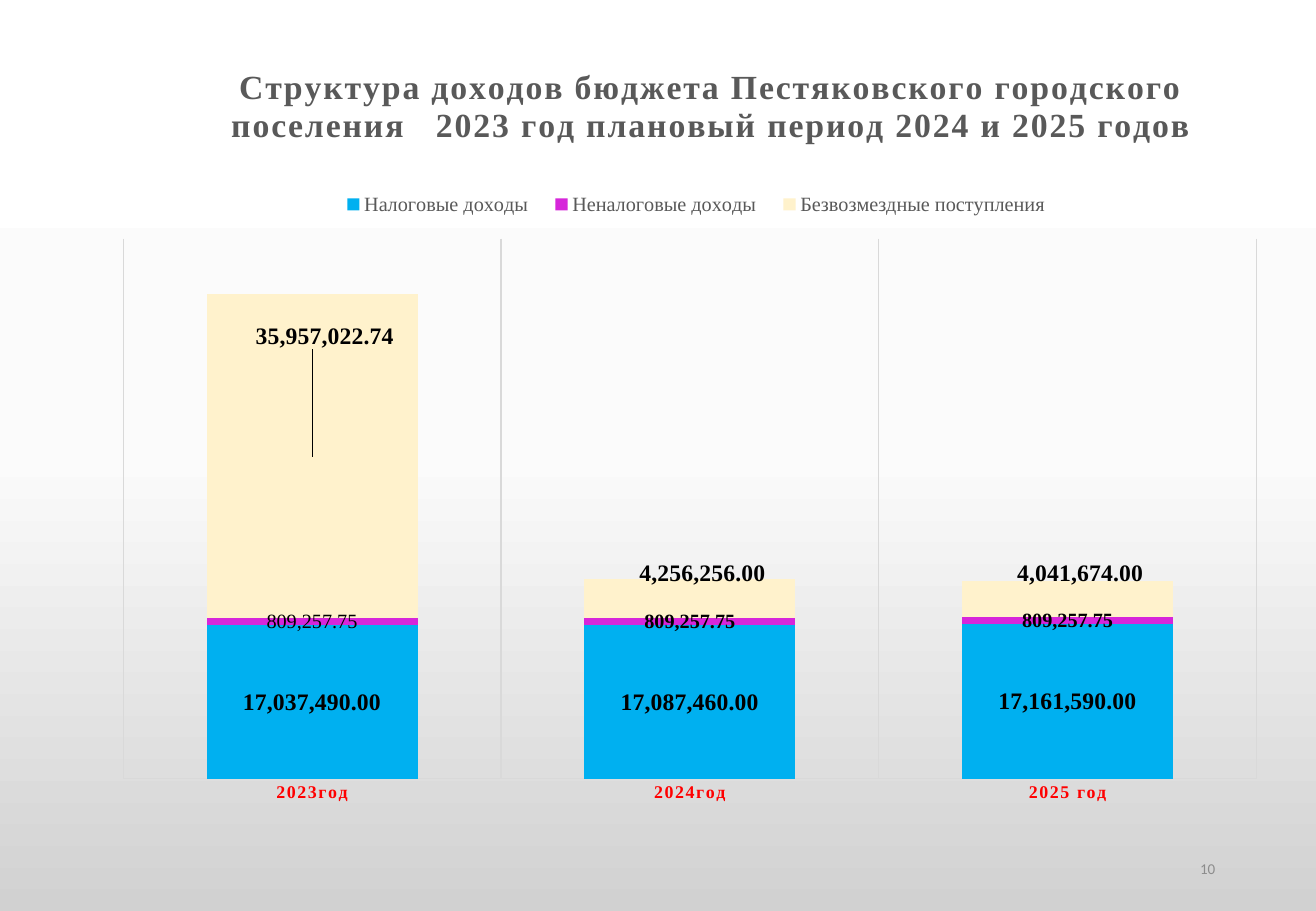
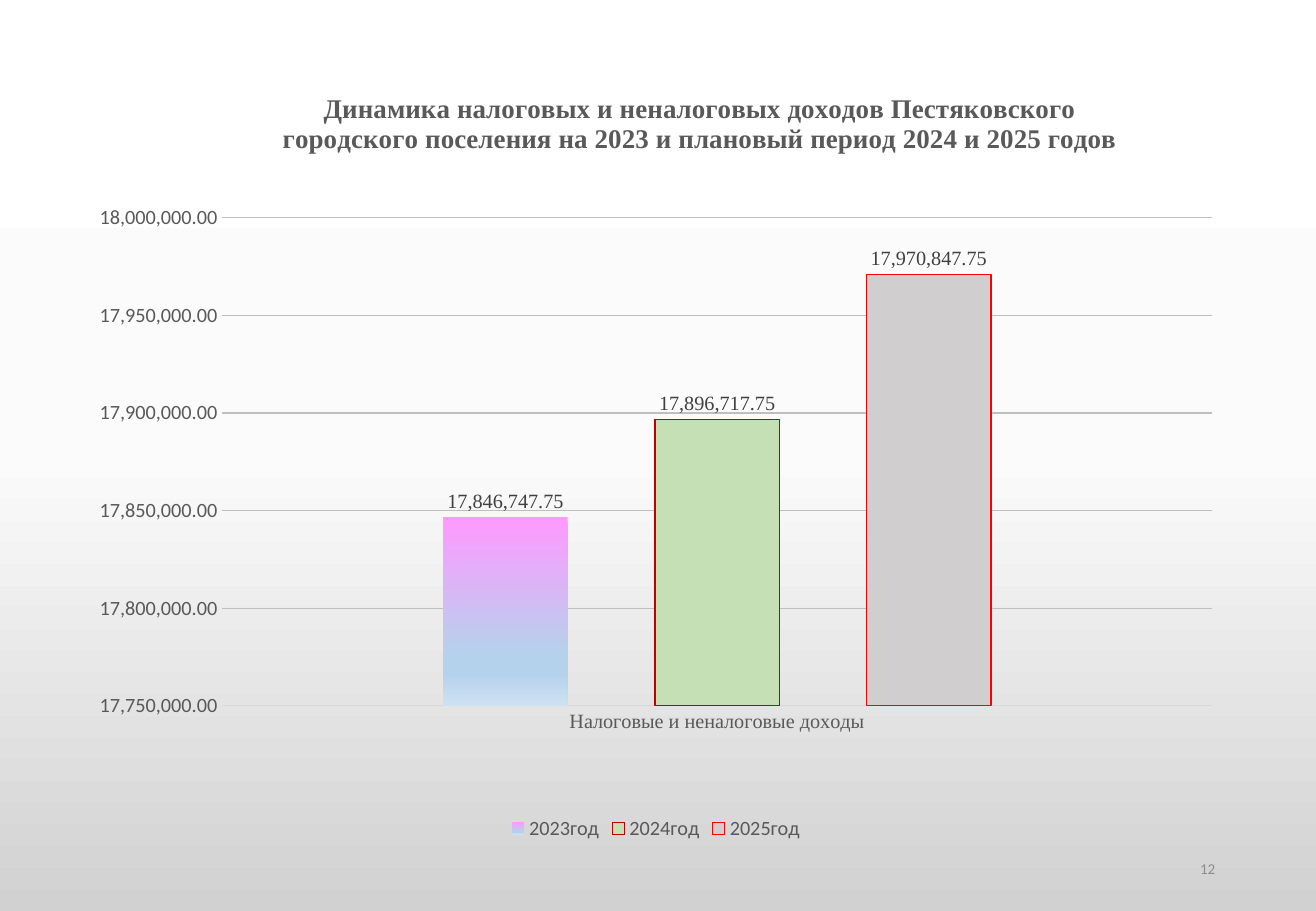
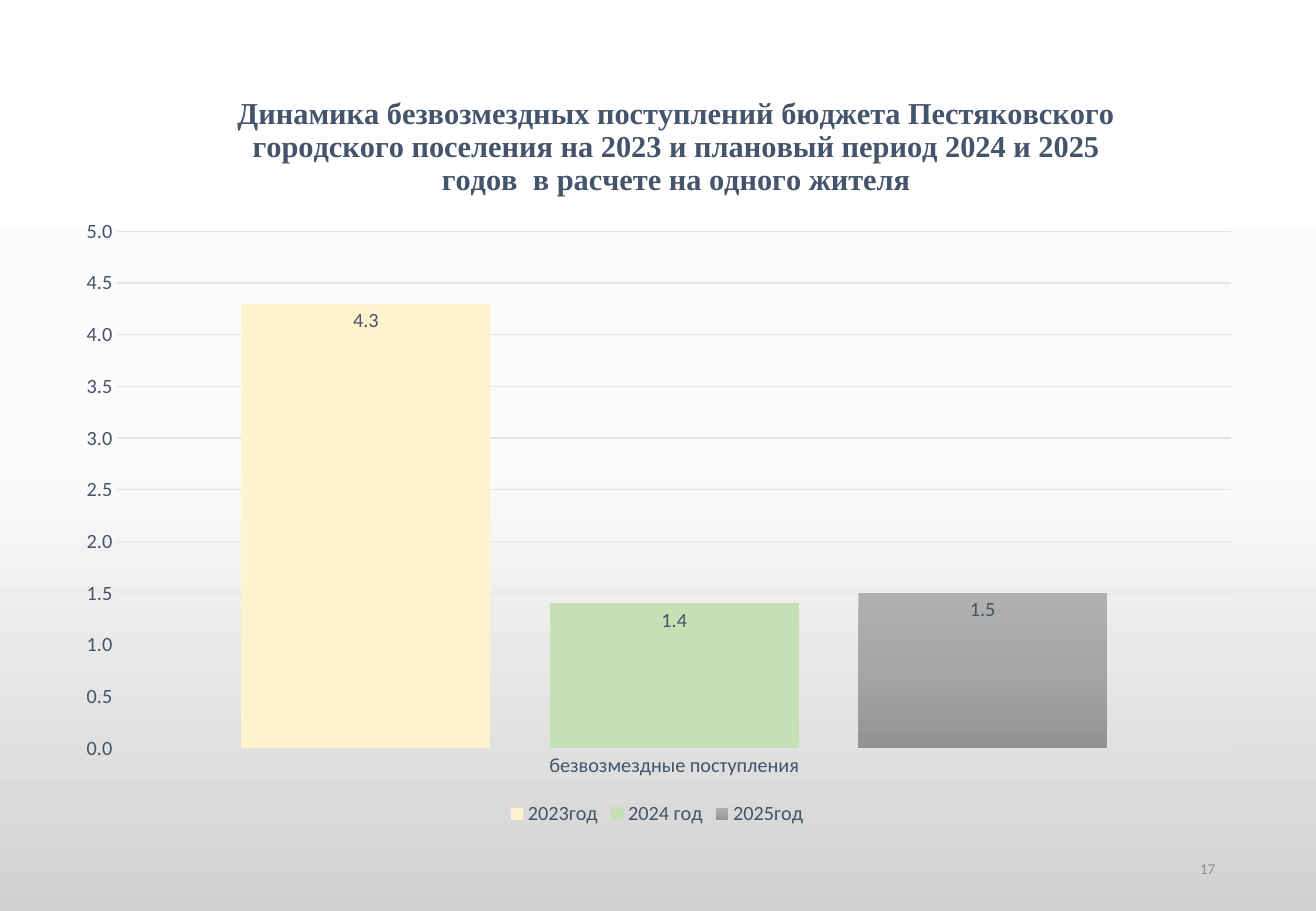
from lxml import etree
from pptx import Presentation
from pptx.chart.data import CategoryChartData
from pptx.dml.color import RGBColor
from pptx.enum.chart import (XL_CHART_TYPE as CT, XL_LABEL_POSITION as LP,
                             XL_LEGEND_POSITION as LEG, XL_TICK_MARK as TICK)
from pptx.enum.text import MSO_ANCHOR, PP_ALIGN
from pptx.oxml.ns import qn
from pptx.util import Inches, Pt

SERIF, SANS = "Times New Roman", "Calibri"
BLACK = RGBColor(0, 0, 0)
WHITE = RGBColor(0xFF, 0xFF, 0xFF)
RED = RGBColor(0xFF, 0, 0)
DARK_RED = RGBColor(0xC0, 0, 0)
GREY = RGBColor(0x59, 0x59, 0x59)
LABEL_GREY = RGBColor(0x40, 0x40, 0x40)
NUMBER_GREY = RGBColor(0x8C, 0x8C, 0x8C)
RULE_GREY = RGBColor(0xD9, 0xD9, 0xD9)
GRID_GREY = RGBColor(0xBF, 0xBF, 0xBF)
SLATE = RGBColor(0x44, 0x54, 0x6A)
PALE_SLATE = RGBColor(0xE0, 0xE5, 0xEB)
SKY = RGBColor(0, 0xB0, 0xF0)
MAGENTA = RGBColor(0xD6, 0x26, 0xDA)
CREAM = RGBColor(0xFF, 0xF2, 0xCC)
GREEN = RGBColor(0xC5, 0xE0, 0xB4)
SILVER = RGBColor(0xD0, 0xCE, 0xCE)

# Gradients run from top to bottom: (percent, colour)
PAGE = [(0, WHITE), (50, RGBColor(0xFB, 0xFB, 0xFB)), (100, RGBColor(0xD1, 0xD1, 0xD1))]
BLUE = RGBColor(0xB5, 0xD2, 0xEC)
PINK_BLUE = [(0, RGBColor(0xFF, 0x99, 0xFF)), (74, BLUE), (83, BLUE),
             (100, RGBColor(0xCE, 0xE1, 0xF2))]
STEEL = [(0, RGBColor(0xB0, 0xB0, 0xB0)), (50, RGBColor(0xA5, 0xA5, 0xA5)),
         (100, RGBColor(0x93, 0x93, 0x93))]


def font(size, color, name=SANS, bold=False):
    return dict(size=Pt(size), color=color, name=name, bold=bold)


# Content: series are (name, values, fill, outline, label font)
MONEY = "#,##0.00"
BIG = font(14, BLACK, SERIF, True)
SMALL = font(12, BLACK, SERIF, True)
VALUE = font(12, LABEL_GREY, SERIF)
PLAIN = font(12, SLATE)

SLIDES = [
    dict(number="10", box=(0.49, 0.2, 10.48, 7.06), type=CT.COLUMN_STACKED,
         title="Структура доходов бюджета Пестяковского городского поселения   "
               "2023 год плановый период 2024 и 2025 годов",
         title_font=font(20, GREY, SERIF, True), title_at=(0.13, 0.04), title_spc=100,
         cats=["2023год", "2024год", "2025 год"], fmt=MONEY, gap=79, overlap=100,
         plot=(0.05, 0.25, 0.89, 0.63), scale=(0, 60_000_000, 10_000_000),
         cat_font=font(10.6, RED, SERIF, True), cat_spc=100, cat_line=RULE_GREY,
         cat_grid=RULE_GREY, legend=LEG.TOP, legend_font=font(12, GREY, SERIF),
         legend_box=(0.21, 0.19, 0.58, 0.04),
         series=[
             ("Налоговые доходы", [17037490, 17087460, 17161590], SKY, None, BIG),
             ("Неналоговые доходы", [809257.75] * 3, MAGENTA, None, SMALL),
             ("Безвозмездные поступления", [35957022.74, 4256256, 4041674],
              CREAM, None, BIG)],
         # (series, point): (x shift, y shift, font)
         moved={(1, 0): (0, 0, font(12, BLACK, SERIF)),
                (2, 0): (0.01, -0.14, BIG),
                (2, 1): (0.01, -0.03, BIG),
                (2, 2): (0.01, -0.03, BIG)}),
    dict(number="12", box=(0.82, 0.58, 9.16, 6.38), type=CT.COLUMN_CLUSTERED,
         title="Динамика налоговых и неналоговых доходов Пестяковского городского "
               "поселения на 2023 и плановый период 2024 и 2025 годов",
         title_font=font(16, GREY, SERIF, True), title_at=(0.16, 0.02), title_spc=20,
         cats=["Налоговые и неналоговые доходы"], fmt=MONEY, gap=355, overlap=-70,
         plot=(0.11, 0.19, 0.89, 0.63), scale=(17_750_000, 18_000_000, 50_000),
         cat_font=font(12, GREY, SERIF), cat_line=RULE_GREY,
         val_font=font(12, GREY), val_grid=GRID_GREY,
         legend=LEG.BOTTOM, legend_font=font(12, GREY), label_pos=LP.OUTSIDE_END,
         series=[("2023год", [17846747.75], PINK_BLUE, None, VALUE),
                 ("2024год", [17896717.75], GREEN, DARK_RED, VALUE),
                 ("2025год", [17970847.75], SILVER, RED, VALUE)]),
    dict(number="17", box=(0.68, 0.67, 9.46, 6.17), type=CT.COLUMN_CLUSTERED,
         title="Динамика безвозмездных поступлений бюджета Пестяковского городского "
               "поселения на 2023 и плановый период 2024 и 2025 годов  "
               "в расчете на одного жителя",
         title_font=font(18, SLATE, SERIF, True), title_at=(0.13, 0.01),
         cats=["безвозмездные поступления"], fmt="0.0", gap=100, overlap=-24,
         plot=(0.03, 0.2, 0.97, 0.69), scale=(0, 5, 0.5),
         cat_font=PLAIN, cat_line=PALE_SLATE, val_font=PLAIN, val_grid=PALE_SLATE,
         legend=LEG.BOTTOM, legend_font=PLAIN, label_pos=LP.INSIDE_END,
         series=[("2023год", [4.3], CREAM, None, PLAIN),
                 ("2024 год", [1.4], GREEN, None, PLAIN),
                 ("2025год", [1.5], STEEL, None, PLAIN)]),
]


# Formatting helpers
def set_font(target, style):
    for key, value in style.items():
        if key == "color":
            target.color.rgb = value
        else:
            setattr(target, key, value)


def set_line(line, color):
    line.color.rgb = color
    line.width = Pt(0.75)


def set_gradient(fill, owner, stops):
    fill.gradient()
    fill.gradient_angle = 270
    stop_list = next(owner.iter(qn("a:gsLst")))
    for old in list(stop_list):
        stop_list.remove(old)
    for percent, color in stops:
        stop = etree.SubElement(stop_list, qn("a:gs"), pos=str(percent * 1000))
        etree.SubElement(stop, qn("a:srgbClr"), val=str(color))


def set_layout(parent, index, numbers, edge=True, inner=False):
    """Place a chart part by fractions of the chart: x, y and perhaps w, h."""
    layout = parent.find(qn("c:layout"))
    if layout is not None:
        parent.remove(layout)
    layout = etree.Element(qn("c:layout"))
    parent.insert(index, layout)
    manual = etree.SubElement(layout, qn("c:manualLayout"))
    parts = [("layoutTarget", "inner")] if inner else []
    if edge:
        parts += [("xMode", "edge"), ("yMode", "edge")]
    parts += zip("xywh", numbers)
    for tag, value in parts:
        etree.SubElement(manual, qn("c:" + tag), val=str(value))


# Chart parts
def add_title(chart, d):
    p = chart.chart_title.text_frame.paragraphs[0]
    r = p.add_run()
    r.text = d["title"]
    set_font(r.font, d["title_font"])
    r.font._element.set("spc", str(d.get("title_spc", 0)))
    set_layout(chart.chart_title._element, 1, d["title_at"])


def format_axes(chart, d):
    cat, val = chart.category_axis, chart.value_axis
    for axis in (cat, val):
        axis.major_tick_mark = axis.minor_tick_mark = TICK.NONE
    set_font(cat.tick_labels.font, d["cat_font"])
    next(cat._element.iter(qn("a:defRPr"))).set("spc", str(d.get("cat_spc", 0)))
    set_line(cat.format.line, d["cat_line"])
    val.minimum_scale, val.maximum_scale, val.major_unit = d["scale"]
    val.format.line.fill.background()
    for axis, key in ((cat, "cat_grid"), (val, "val_grid")):
        axis.has_major_gridlines = key in d
        if key in d:
            set_line(axis.major_gridlines.format.line, d[key])
    val.visible = "val_font" in d
    if val.visible:
        val.tick_labels.number_format = d["fmt"]
        val.tick_labels.number_format_is_linked = False
        set_font(val.tick_labels.font, d["val_font"])


def format_series(series, fill, outline, label_font, d):
    if isinstance(fill, list):
        set_gradient(series.format.fill, series._element, fill)
    else:
        series.format.fill.solid()
        series.format.fill.fore_color.rgb = fill
    if outline is not None:
        set_line(series.format.line, outline)
    labels = series.data_labels
    labels.show_value = True
    labels.number_format, labels.number_format_is_linked = d["fmt"], False
    set_font(labels.font, label_font)
    if "label_pos" in d:
        labels.position = d["label_pos"]


def move_label(series, point, dx, dy, style, fmt):
    set_font(series.points[point].data_label.font, style)
    label = series._element.findall(".//" + qn("c:dLbl"))[point]
    set_layout(label, 1, (dx, dy), edge=False)
    number = etree.Element(qn("c:numFmt"), formatCode=fmt, sourceLinked="0")
    label.insert(2, number)


def add_chart(s, d):
    data = CategoryChartData(number_format=d["fmt"])
    data.categories = d["cats"]
    for name, values, *_ in d["series"]:
        data.add_series(name, values)
    chart = s.shapes.add_chart(d["type"], *map(Inches, d["box"]), data).chart
    set_font(chart.font, font(10, BLACK))
    add_title(chart, d)
    format_axes(chart, d)

    plot = chart.plots[0]
    plot.gap_width, plot.overlap, plot.vary_by_categories = d["gap"], d["overlap"], False
    all_series = list(plot.series)
    for series, (_, _, fill, outline, label_font) in zip(all_series, d["series"]):
        format_series(series, fill, outline, label_font, d)
    for (i, point), (dx, dy, style) in d.get("moved", {}).items():
        move_label(all_series[i], point, dx, dy, style, d["fmt"])
    plot_area = next(chart._chartSpace.iter(qn("c:plotArea")))
    set_layout(plot_area, 0, d["plot"], inner=True)

    chart.has_legend = True
    chart.legend.position = d["legend"]
    chart.legend.include_in_layout = False
    set_font(chart.legend.font, d["legend_font"])
    if "legend_box" in d:
        set_layout(chart.legend._element, 1, d["legend_box"])


def add_number(s, text):
    box = s.shapes.add_textbox(Inches(7.66), Inches(6.95), Inches(2.44), Inches(0.4))
    tf = box.text_frame
    tf.word_wrap = True
    tf.vertical_anchor = MSO_ANCHOR.MIDDLE
    p = tf.paragraphs[0]
    p.alignment = PP_ALIGN.RIGHT
    r = p.add_run()
    r.text = text
    set_font(r.font, font(8.9, NUMBER_GREY))


def main():
    prs = Presentation()
    prs.slide_width, prs.slide_height = Inches(10.83), Inches(7.5)
    master = prs.slide_master
    set_gradient(master.background.fill, master.element, PAGE)
    for d in SLIDES:
        s = prs.slides.add_slide(prs.slide_layouts[6])
        add_chart(s, d)
        add_number(s, d["number"])
    prs.save("out.pptx")


if __name__ == "__main__":
    main()
